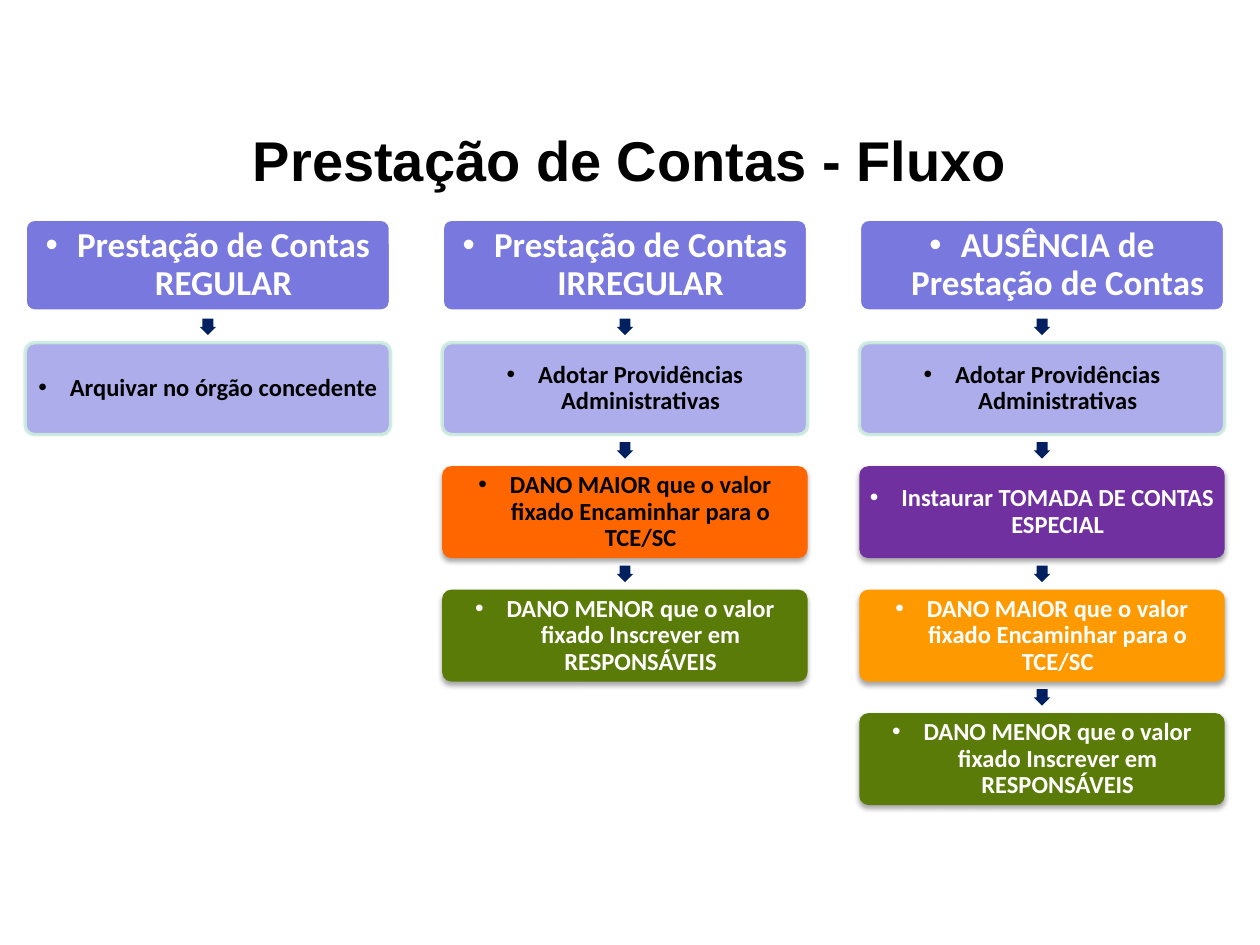
"""Build the accountability flow slide: three columns of linked steps."""
from lxml import etree
from pptx import Presentation
from pptx.dml.color import RGBColor
from pptx.enum.shapes import MSO_SHAPE
from pptx.enum.text import MSO_ANCHOR, PP_ALIGN
from pptx.oxml.ns import qn
from pptx.util import Inches, Pt

ROUNDED = MSO_SHAPE.ROUNDED_RECTANGLE
ARROW = MSO_SHAPE.RIGHT_ARROW
MIDDLE = MSO_ANCHOR.MIDDLE
CENTER = PP_ALIGN.CENTER

LEFT, TOP = 0.2, 1.74
STEP_W, STEP_H = 2.9, 0.73
COLUMN_PITCH, ROW_PITCH = 3.31, 0.98
ARROW_SIZE, ARROW_DROP = 0.13, 0.79
BULLET_INDENT = Inches(0.25)

# style: fill, text colour, text size, inset, outline, opacity, shadow
HEADING = ("7878DE", "FFFFFF", 20, 0.03, "FFFFFF", 100, False)
ACTION = ("A5A5E9", "000000", 14, 0.02, "CCECDE", 90, False)
ORANGE = ("FF6600", "000000", 14, 0.02, None, 100, True)
AMBER = ("FF9900", "FFFFFF", 14, 0.02, None, 100, True)
PURPLE = ("7030A0", "FFFFFF", 14, 0.02, None, 100, True)
GREEN = ("5A7B07", "FFFFFF", 14, 0.02, None, 100, True)

MEASURES = "Adotar Providências Administrativas"
MAJOR = "DANO MAIOR que o valor fixado Encaminhar para o TCE/SC"
MINOR = "DANO MENOR que o valor fixado Inscrever em RESPONSÁVEIS"

COLUMNS = [
    [("Prestação de Contas REGULAR", HEADING),
     ("Arquivar no órgão concedente", ACTION)],
    [("Prestação de Contas IRREGULAR", HEADING),
     (MEASURES, ACTION), (MAJOR, ORANGE), (MINOR, GREEN)],
    [("AUSÊNCIA de Prestação de Contas", HEADING),
     (MEASURES, ACTION), ("Instaurar TOMADA DE CONTAS ESPECIAL", PURPLE),
     (MAJOR, AMBER), (MINOR, GREEN)],
]


def paint(color_format, color, opacity=100):
    color_format.rgb = RGBColor.from_string(color)
    if opacity < 100:
        srgb = color_format._xFill.find(qn("a:srgbClr"))
        etree.SubElement(srgb, qn("a:alpha"), val=str(opacity * 1000))


def write(paragraph, text, font_name, size, color):
    paragraph.alignment = CENTER
    run = paragraph.add_run()
    run.text = text
    run.font.name = font_name
    run.font.size = Pt(size)
    run.font.bold = True
    paint(run.font.color, color)


prs = Presentation()
prs.slide_width, prs.slide_height = Inches(10), Inches(7.5)
slide = prs.slides.add_slide(prs.slide_layouts[6])

title = slide.shapes.add_textbox(0, Inches(0.99), Inches(10), Inches(0.55))
title.text_frame.word_wrap = True
title.text_frame.vertical_anchor = MIDDLE
write(title.text_frame.paragraphs[0], "Prestação de Contas - Fluxo", "Arial", 32, "000000")

for column, steps in enumerate(COLUMNS):
    x = LEFT + column * COLUMN_PITCH
    for row, (text, style) in enumerate(steps):
        fill, ink, size, inset, outline, opacity, shadowed = style
        y = TOP + row * ROW_PITCH

        step = slide.shapes.add_shape(ROUNDED, Inches(x), Inches(y), Inches(STEP_W), Inches(STEP_H))
        step.adjustments[0] = 0.1
        step.shadow.inherit = False
        step.fill.solid()
        paint(step.fill.fore_color, fill, opacity)
        if outline:
            step.line.width = Pt(2)
            paint(step.line.color, outline, opacity)
        else:
            step.line.fill.background()
        if shadowed:
            effects = step._element.spPr.find(qn("a:effectLst"))
            shadow = etree.SubElement(effects, qn("a:outerShdw"), blurRad=str(Pt(3.1)),
                                      dist=str(Pt(1.8)), dir="5400000", rotWithShape="0")
            black = etree.SubElement(shadow, qn("a:srgbClr"), val="000000")
            etree.SubElement(black, qn("a:alpha"), val="35000")

        frame = step.text_frame
        frame.word_wrap = True
        frame.vertical_anchor = MIDDLE
        frame.margin_left = frame.margin_right = Inches(inset)
        frame.margin_top = frame.margin_bottom = Inches(inset)
        paragraph = frame.paragraphs[0]
        paragraph.line_spacing = 0.9
        properties = paragraph._p.get_or_add_pPr()
        properties.set("marL", str(BULLET_INDENT))
        properties.set("indent", str(-BULLET_INDENT))
        etree.SubElement(properties, qn("a:buFont"), typeface="Arial")
        etree.SubElement(properties, qn("a:buChar"), char="•")
        write(paragraph, text, "Calibri", size, ink)

        if row < len(steps) - 1:
            arrow = slide.shapes.add_shape(
                ARROW, Inches(x + (STEP_W - ARROW_SIZE) / 2), Inches(y + ARROW_DROP),
                Inches(ARROW_SIZE), Inches(ARROW_SIZE))
            arrow.rotation = 90
            arrow.adjustments[0] = 0.667
            arrow.adjustments[1] = 0.5
            arrow.shadow.inherit = False
            arrow.fill.solid()
            paint(arrow.fill.fore_color, "002060")
            arrow.line.fill.background()

prs.save("out.pptx")
